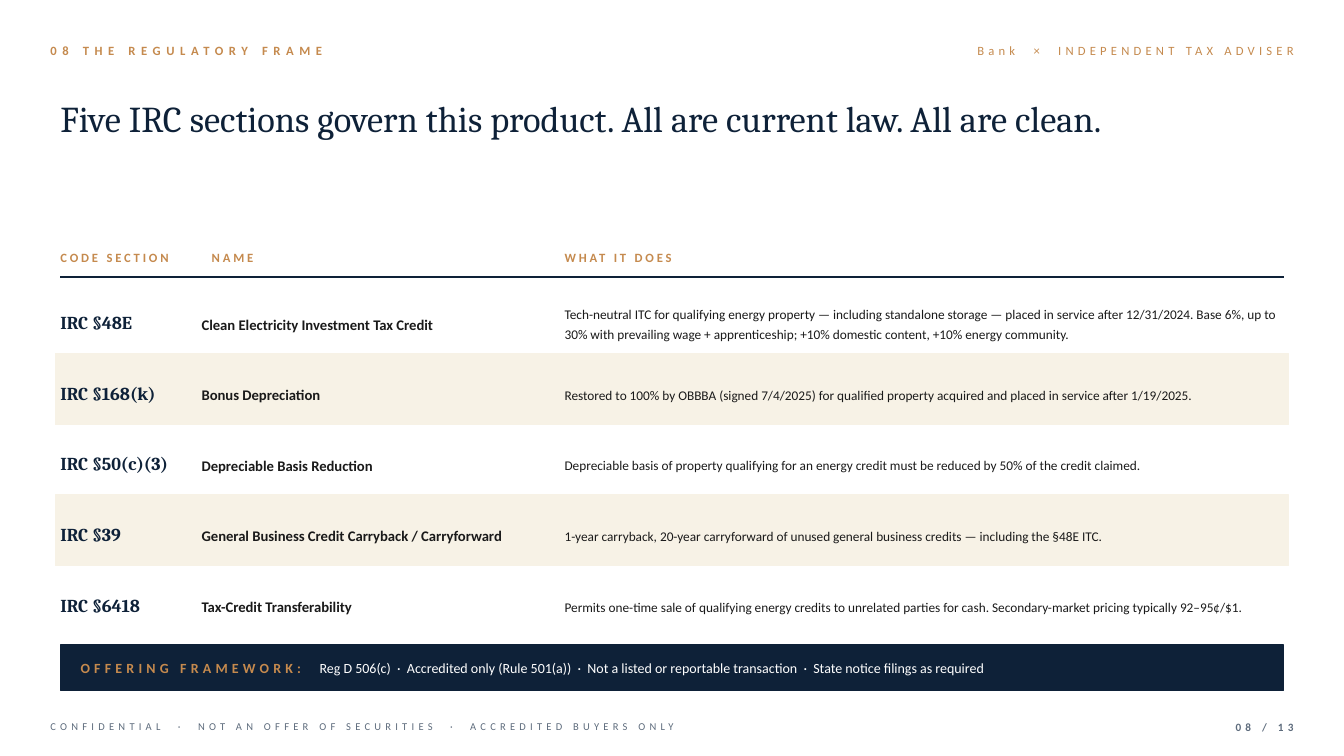
import pptx
import pptx.dml.color
import pptx.enum.shapes
import pptx.enum.text
import pptx.oxml.ns
import pptx.util
from lxml import etree
from pptx.util import Inches

NAVY, COPPER, CREAM = "0E2138", "C58A4E", "F7F2E6"
INK, SLATE, WHITE = "1A1A1A", "5D6B7C", "FFFFFF"
RIGHT = pptx.enum.text.PP_ALIGN.RIGHT
MIDDLE = pptx.enum.text.MSO_ANCHOR.MIDDLE
TOP = pptx.enum.text.MSO_ANCHOR.TOP

# Each column: offset from the table's left, width, heading, heading indent
COLUMNS = [
    (0, 1.4, "CODE SECTION", 0),
    (1.4, 3.2, "NAME", 0.1),
    (5, 7.13, "WHAT IT DOES", 0),
]
CELL_STYLES = [
    dict(size=13, color=NAVY, bold=True, font="Cambria"),
    dict(size=10.5, color=INK, bold=True, line_spacing=1.2),
    dict(size=9.5, color=INK, line_spacing=1.25),
]
SECTIONS = [
    ("IRC §48E", "Clean Electricity Investment Tax Credit",
     "Tech-neutral ITC for qualifying energy property — including standalone storage — placed in "
     "service after 12/31/2024. Base 6%, up to 30% with prevailing wage + apprenticeship; "
     "+10% domestic content, +10% energy community."),
    ("IRC §168(k)", "Bonus Depreciation",
     "Restored to 100% by OBBBA (signed 7/4/2025) for qualified property acquired and placed in "
     "service after 1/19/2025."),
    ("IRC §50(c)(3)", "Depreciable Basis Reduction",
     "Depreciable basis of property qualifying for an energy credit must be reduced by 50% of the "
     "credit claimed."),
    ("IRC §39", "General Business Credit Carryback / Carryforward",
     "1-year carryback, 20-year carryforward of unused general business credits — including the "
     "§48E ITC."),
    ("IRC §6418", "Tax-Credit Transferability",
     "Permits one-time sale of qualifying energy credits to unrelated parties for cash. "
     "Secondary-market pricing typically 92–95¢/$1."),
]


def rgb(color):
    return pptx.dml.color.RGBColor.from_string(color)


def format_run(run, size, color, bold=False, font="Calibri", tracking=0):
    run.font.size = pptx.util.Pt(size)
    run.font.name = font
    run.font.bold = bold
    run.font.color.rgb = rgb(color)
    if tracking:
        run._r.get_or_add_rPr().set("spc", str(tracking * 100))


def add_text(slide, box, text, align=None, anchor=MIDDLE, line_spacing=None, **style):
    shape = slide.shapes.add_textbox(*map(Inches, box))
    frame = shape.text_frame
    frame.word_wrap = True
    frame.vertical_anchor = anchor
    frame.margin_left = frame.margin_right = frame.margin_top = frame.margin_bottom = 0
    frame.text = text
    paragraph = frame.paragraphs[0]
    paragraph.alignment = align
    paragraph.line_spacing = line_spacing
    format_run(paragraph.runs[0], **style)
    return paragraph


def add_band(slide, box, color):
    shape = slide.shapes.add_shape(pptx.enum.shapes.MSO_SHAPE.RECTANGLE, *map(Inches, box))
    shape.shadow.inherit = False
    shape.fill.solid()
    shape.fill.fore_color.rgb = rgb(color)
    shape.line.color.rgb = rgb(color)
    shape.line.width = pptx.util.Pt(1)


def add_rule(slide, left, top, width):
    line = slide.shapes.add_connector(
        pptx.enum.shapes.MSO_CONNECTOR.STRAIGHT,
        Inches(left), Inches(top), Inches(left + width), Inches(top))
    line.line.color.rgb = rgb(NAVY)
    line.line.width = pptx.util.Pt(1.5)
    etree.SubElement(line._element.spPr, pptx.oxml.ns.qn("a:effectLst"))


def add_header(slide, left, top, width, height):
    split = 7
    add_text(slide, (left, top, split, height), "08 THE REGULATORY FRAME",
             size=9, color=COPPER, bold=True, tracking=4)
    add_text(slide, (left + split, top, width - split, height),
             "Bank  ×  INDEPENDENT TAX ADVISER", align=RIGHT, size=9, color=COPPER, tracking=3)


def add_sections(slide, left, top, width):
    # Headings and rule
    for offset, column_width, heading, indent in COLUMNS:
        add_text(slide, (left + offset + indent, top, column_width, 0.3), heading,
                 size=9, color=COPPER, bold=True, tracking=2)
    add_rule(slide, left, top + 0.35, width)

    # Rows, every second one on a cream band
    row_height = 0.7
    for index, section in enumerate(SECTIONS):
        row_top = top + 0.45 + index * row_height
        if index % 2:
            add_band(slide, (left - 0.05, row_top - 0.04, width + 0.1, row_height), CREAM)
        for text, column, style in zip(section, COLUMNS, CELL_STYLES):
            add_text(slide, (left + column[0], row_top, column[1], row_height), text, **style)


def add_framework(slide, left, top, width, height):
    add_band(slide, (left, top, width, height), NAVY)
    paragraph = add_text(slide, (left + 0.2, top, width - 0.4, height), "OFFERING FRAMEWORK:",
                         size=10, color=COPPER, bold=True, tracking=3)
    tabs = etree.SubElement(paragraph._p.get_or_add_pPr(), pptx.oxml.ns.qn("a:tabLst"))
    etree.SubElement(tabs, pptx.oxml.ns.qn("a:tab"), pos=str(Inches(2.37)), algn="l")
    terms = paragraph.add_run()
    terms.text = ("\tReg D 506(c)  ·  Accredited only (Rule 501(a))  ·  "
                  "Not a listed or reportable transaction  ·  State notice filings as required")
    format_run(terms, size=10, color=WHITE)


def add_footer(slide, left, top, width, height):
    add_text(slide, (left, top, 9.5, height),
             "CONFIDENTIAL  ·  NOT AN OFFER OF SECURITIES  ·  ACCREDITED BUYERS ONLY",
             size=7.5, color=SLATE, tracking=3)
    add_text(slide, (left + width - 0.9, top, 0.9, height), "08 / 13",
             align=RIGHT, size=8, color=SLATE, bold=True, tracking=3)


def main():
    presentation = pptx.Presentation()
    presentation.slide_width = Inches(13.33)
    presentation.slide_height = Inches(7.5)
    slide = presentation.slides.add_slide(presentation.slide_layouts[6])

    add_header(slide, 0.5, 0.35, 12.33, 0.3)
    add_text(slide, (0.6, 0.95, 12.13, 1.2),
             "Five IRC sections govern this product. All are current law. All are clean.",
             anchor=TOP, size=26, color=NAVY, font="Cambria")
    add_sections(slide, 0.6, 2.4, 12.13)
    add_framework(slide, 0.6, 6.4, 12.13, 0.45)
    add_footer(slide, 0.5, 7.1, 12.33, 0.22)

    presentation.save("out.pptx")


if __name__ == "__main__":
    main()
